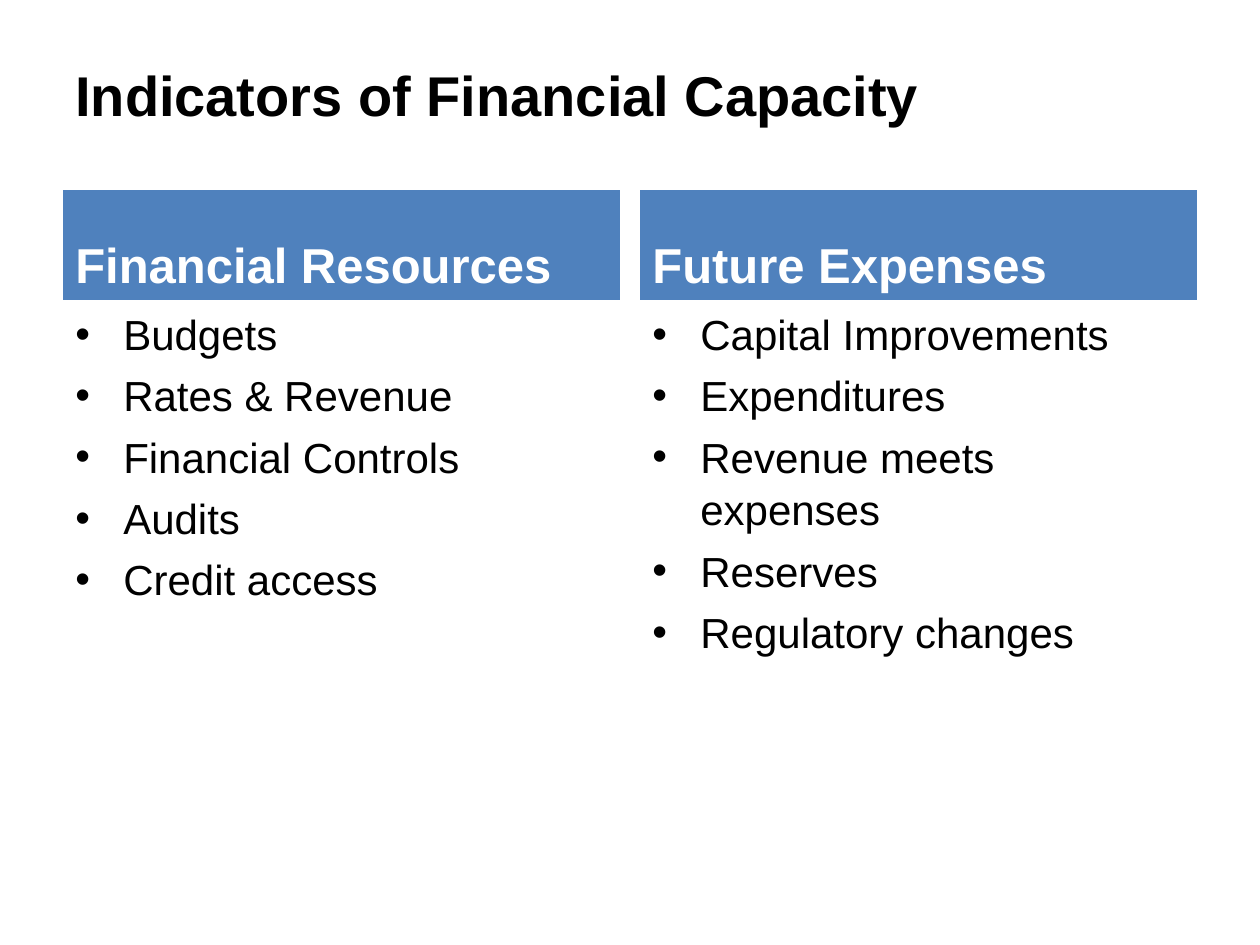
from lxml.etree import SubElement
from pptx import Presentation
from pptx.dml.color import RGBColor
from pptx.enum.shapes import MSO_SHAPE
from pptx.enum.text import MSO_ANCHOR as Anchor, PP_ALIGN as Align
from pptx.oxml.ns import qn
from pptx.util import Inches, Pt

TITLE = "Indicators of Financial Capacity"
COLUMNS = [
    ("Financial Resources",
     ["Budgets", "Rates & Revenue", "Financial Controls", "Audits", "Credit access"]),
    ("Future Expenses",
     ["Capital Improvements", "Expenditures", "Revenue meets expenses", "Reserves",
      "Regulatory changes"]),
]
BLACK, WHITE, BLUE = "000000", "FFFFFF", "4F81BD"
MARGIN, COLUMN_WIDTH, GAP = 0.5, 4.42, 0.16
HEADER_TOP, HEADER_HEIGHT, LIST_HEIGHT = 1.51, 0.87, 4.32
INDENT = 0.38


def color(value):
    return RGBColor.from_string(value)


def set_frame(shape, anchor):
    frame = shape.text_frame
    frame.word_wrap = True
    frame.vertical_anchor = anchor
    return frame


def add_text(para, text, size, ink, bold=False):
    para.alignment = Align.LEFT
    span = para.add_run()
    span.text = text
    span.font.name = "Arial"
    span.font.size = Pt(size)
    span.font.bold = bold
    span.font.color.rgb = color(ink)


def add_bullet(para):
    props = para._p.get_or_add_pPr()
    props.set("marL", str(Inches(INDENT)))
    props.set("indent", str(-Inches(INDENT)))
    SubElement(props, qn("a:buFont")).set("typeface", "Arial")
    SubElement(props, qn("a:buChar")).set("char", "•")


def add_header(page, left, text):
    box = page.shapes.add_shape(
        MSO_SHAPE.RECTANGLE, Inches(left), Inches(HEADER_TOP),
        Inches(COLUMN_WIDTH), Inches(HEADER_HEIGHT))
    box.shadow.inherit = False
    box.fill.solid()
    box.fill.fore_color.rgb = color(BLUE)
    box.line.fill.background()
    add_text(set_frame(box, Anchor.BOTTOM).paragraphs[0], text, 28, WHITE, True)


def add_list(page, left, items):
    box = page.shapes.add_textbox(
        Inches(left), Inches(HEADER_TOP + HEADER_HEIGHT),
        Inches(COLUMN_WIDTH), Inches(LIST_HEIGHT))
    frame = set_frame(box, Anchor.TOP)
    for index, item in enumerate(items):
        para = frame.add_paragraph() if index else frame.paragraphs[0]
        para.line_spacing = 1.05
        para.space_before = Pt(4.8 if index else 0)
        add_bullet(para)
        add_text(para, item, 24, BLACK)


def main():
    deck = Presentation()
    deck.slide_width, deck.slide_height = Inches(10), Inches(7.5)
    page = deck.slides.add_slide(deck.slide_layouts[6])
    title = page.shapes.add_textbox(Inches(MARGIN), Inches(0.12), Inches(9), Inches(1.25))
    add_text(set_frame(title, Anchor.MIDDLE).paragraphs[0], TITLE, 32, BLACK, True)
    for index, (header, items) in enumerate(COLUMNS):
        left = MARGIN + index * (COLUMN_WIDTH + GAP)
        add_header(page, left, header)
        add_list(page, left, items)
    deck.save("out.pptx")


if __name__ == "__main__":
    main()
